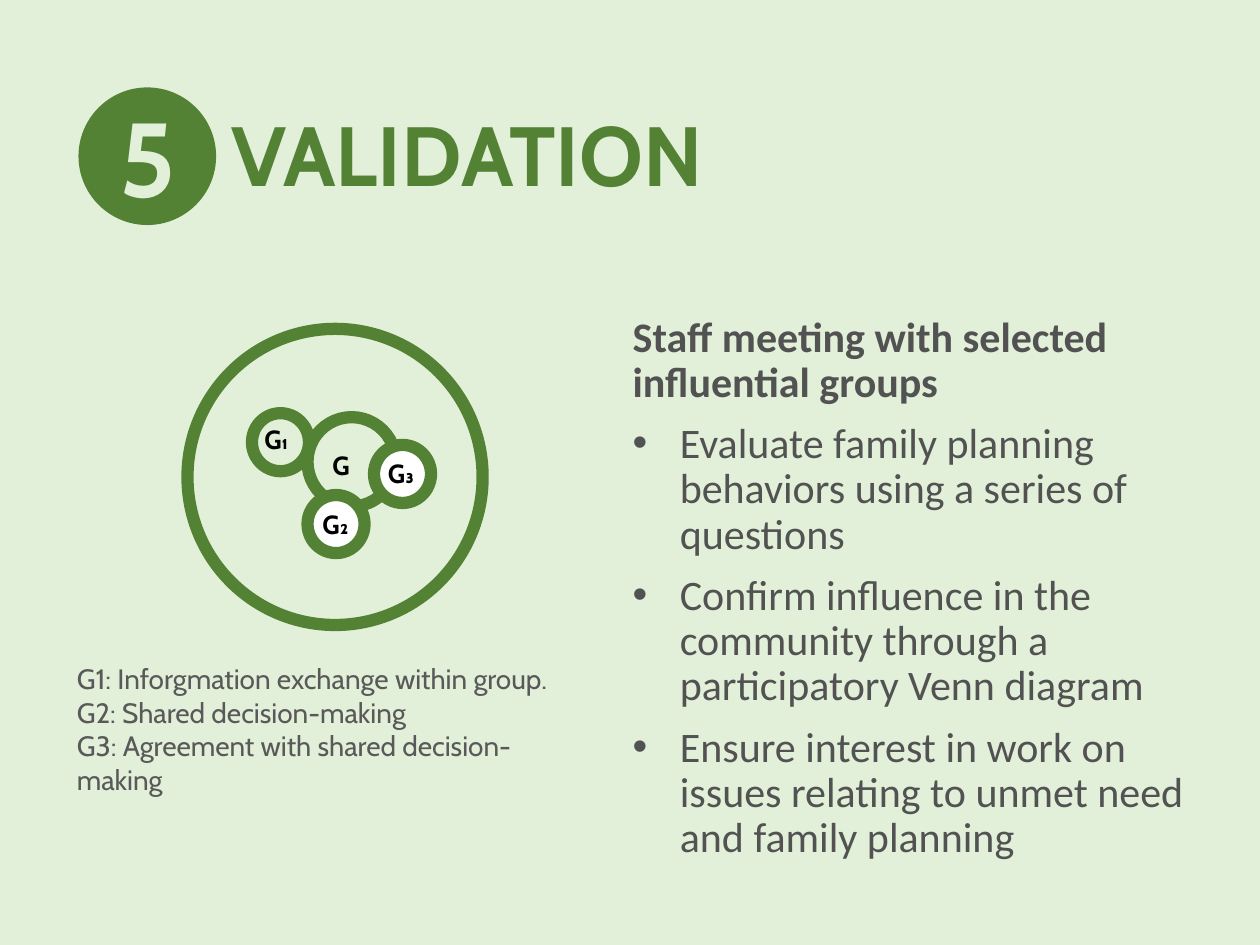
from lxml.etree import SubElement
from pptx import Presentation
from pptx.dml.color import RGBColor
from pptx.enum.shapes import MSO_SHAPE as Preset
from pptx.enum.text import MSO_ANCHOR as Anchor, MSO_AUTO_SIZE as AutoSize, PP_ALIGN as Align
from pptx.oxml.ns import qn
from pptx.util import Cm, Pt

GREEN, PALE, WHITE, BLACK = "548235", "E2F0D9", "FFFFFF", "000000"
BODY_GRAY, CAPTION_GRAY = "525252", "595959"
HEADING_FONT, BODY_FONT = "Cabin", "Calibri"


def color(value):
    return RGBColor.from_string(value)


class SlideBuilder:
    """Holds the deck style and the current slide, and adds elements to it."""

    def __init__(self, deck):
        self.page = deck.slides.add_slide(deck.slide_layouts[1])
        self.page.background.fill.solid()
        self.page.background.fill.fore_color.rgb = color(PALE)

    def place(self, shape, left, top, width, height):
        shape.left, shape.top = Cm(left), Cm(top)
        shape.width, shape.height = Cm(width), Cm(height)

    def add_span(self, para, text, size, ink, font=HEADING_FONT, bold=False):
        span = para.add_run()
        span.text = text
        span.font.size, span.font.name, span.font.bold = Pt(size), font, bold
        span.font.color.rgb = color(ink)

    def center(self, box, text, size, ink):
        frame = box.text_frame
        frame.word_wrap = True
        frame.auto_size = AutoSize.NONE
        frame.vertical_anchor = Anchor.MIDDLE
        frame.margin_left = frame.margin_right = Cm(0.18)
        frame.margin_top = frame.margin_bottom = Cm(0.1)
        para = frame.paragraphs[0]
        para.alignment = Align.CENTER
        self.add_span(para, text, size, ink, bold=True)

    def title(self, text, *area):
        self.place(self.page.shapes.title, *area)
        self.center(self.page.shapes.title, text, 48, GREEN)

    def bullet(self, para, symbol):
        props = para._p.get_or_add_pPr()
        indent = Cm(0.95) if symbol else 0
        props.set("marL", str(indent))
        props.set("indent", str(-indent))
        if symbol:
            SubElement(props, qn("a:buFont"), typeface="Arial")
            SubElement(props, qn("a:buChar"), char=symbol)
        else:
            SubElement(props, qn("a:buNone"))

    def body(self, heading, items, *area):
        box = self.page.placeholders[1]
        self.place(box, *area)
        frame = box.text_frame
        frame.word_wrap = True
        frame.auto_size = AutoSize.NONE
        frame.vertical_anchor = Anchor.BOTTOM
        for index, text in enumerate([heading, *items]):
            para = frame.add_paragraph() if index else frame.paragraphs[0]
            para.line_spacing = 0.9
            para.space_before = para.space_after = Pt(4.5)
            self.bullet(para, "•" if index else None)
            self.add_span(para, text, 24, BODY_GRAY, BODY_FONT, bold=index == 0)

    def circle(self, left, top, width, height, fill=None, weight=7):
        shape = self.page.shapes.add_shape(
            Preset.OVAL, Cm(left), Cm(top), Cm(width), Cm(height))
        shape.shadow.inherit = False
        shape.line.color.rgb = color(GREEN)
        shape.line.width = Pt(weight)
        if fill:
            shape.fill.solid()
            shape.fill.fore_color.rgb = color(fill)
        else:
            shape.fill.background()

    def text_box(self, left, top, width, height):
        box = self.page.shapes.add_textbox(Cm(left), Cm(top), Cm(width), Cm(height))
        box.text_frame.word_wrap = True
        return box

    def label(self, text, left, top):
        para = self.text_box(left, top, 1.12, 1.02).text_frame.paragraphs[0]
        para.space_after = Pt(7.5)
        self.add_span(para, text, 15, BLACK, bold=True)

    def caption(self, lines, *area):
        frame = self.text_box(*area).text_frame
        for index, line in enumerate(lines):
            para = frame.add_paragraph() if index else frame.paragraphs[0]
            self.add_span(para, line, 16, CAPTION_GRAY)

    def badge(self, number):
        self.circle(1.6, 1.78, 2.74, 2.74, GREEN, 1)
        self.center(self.text_box(1.14, 2.18, 3.68, 1.91), number, 60, PALE)


def main():
    deck = Presentation()
    deck.slide_width, deck.slide_height = Cm(25.4), Cm(19.05)
    slide = SlideBuilder(deck)
    slide.body("Staff meeting with selected influential groups", [
        "Evaluate family planning behaviors using a series of questions",
        "Confirm influence in the community through a participatory Venn diagram",
        "Ensure interest in work on issues relating to unmet need and family planning",
    ], 12.5, 6.15, 12.22, 11.35)
    slide.title("VALIDATION ", 3.78, 2.13, 11.66, 1.91)

    slide.circle(3.78, 6.63, 5.95, 5.97)
    small = (1.15, 1.17)
    slide.circle(5.08, 8.33, *small)
    slide.circle(6.2, 8.41, 1.78, 1.8)
    slide.circle(7.54, 8.97, *small, WHITE)
    slide.circle(6.2, 9.98, *small, WHITE)
    for text, left, top in [("G₂", 6.25, 10.13), ("G₃", 7.57, 9.09),
                            ("G₁", 5.08, 8.41), ("G", 6.45, 8.94)]:
        slide.label(text, left, top)

    slide.caption([
        "G1: Inforgmation exchange within group.",
        "G2: Shared decision-making",
        "G3: Agreement with shared decision-making",
    ], 1.3, 13.21, 10.97, 2.31)
    slide.badge("5")
    deck.save("out.pptx")


if __name__ == "__main__":
    main()
